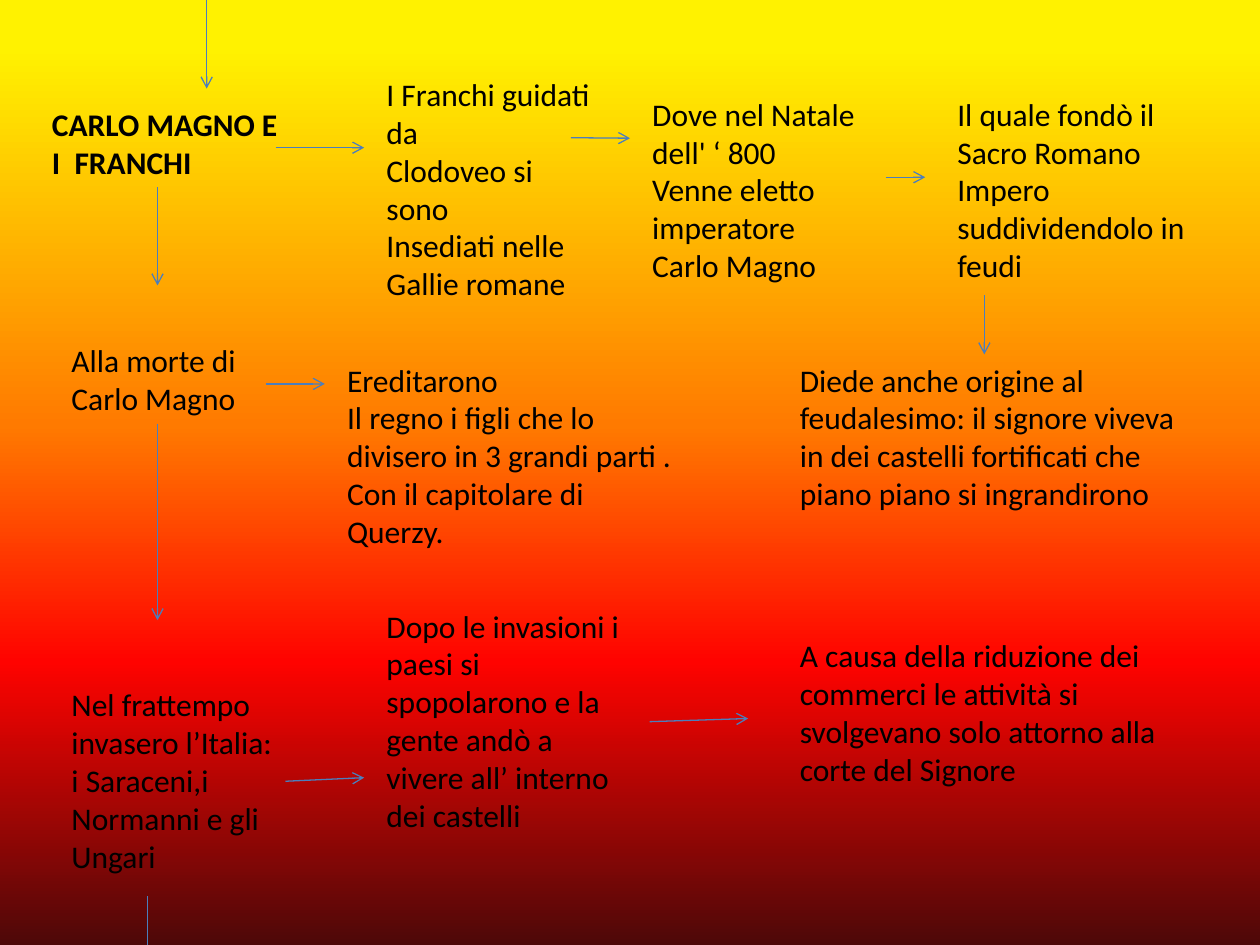
from lxml.etree import SubElement
from pptx import Presentation
from pptx.dml.color import RGBColor
from pptx.enum.shapes import MSO_CONNECTOR
from pptx.enum.text import MSO_ANCHOR, MSO_AUTO_SIZE, PP_ALIGN
from pptx.oxml.ns import qn
from pptx.util import Pt

COLORS = {"text": "000000", "arrow": "4B7EBC"}
BACKGROUND_STOPS = [(5, "FFF200"), (45, "FF7A00"), (70, "FF0300"), (100, "4D0808")]
FONT = "Calibri"
TEXT_SIZE = 18
LINE_HEIGHT = 21.9
VERTICAL_INSETS = 7.2

# name: (left, top, width, lines shown, paragraphs); lengths in points
TOPICS = {
    "title": (22.5, 56.25, 151.9, 2, ["CARLO MAGNO E I  FRANCHI"]),
    "clodoveo": (213.75, 39.4, 135, 6, [
        "I Franchi guidati da", "Clodoveo si sono", "Insediati nelle", "Gallie romane"]),
    "natale": (365.6, 50.6, 135, 5, [
        "Dove nel Natale dell' ‘ 800", "Venne eletto imperatore", "Carlo Magno"]),
    "impero": (540, 50.6, 157.5, 5, [
        "Il quale fondò il Sacro Romano Impero suddividendolo in feudi"]),
    "feudalesimo": (450, 202.5, 236.25, 4, [
        "Diede anche origine al feudalesimo: il signore viveva in dei castelli "
        "fortificati che piano piano si ingrandirono"]),
    "morte": (33.75, 191.25, 112.5, 2, ["Alla morte di  Carlo Magno"]),
    "eredi": (191.25, 202.5, 202.5, 5, [
        "Ereditarono",
        "Il regno i figli che lo divisero in 3 grandi parti . "
        "Con il capitolare di Querzy."]),
    "invasioni": (33.75, 388.1, 129.4, 5, [
        "Nel frattempo invasero l’Italia: i Saraceni,i Normanni e gli Ungari"]),
    "castelli": (213.75, 343.1, 157.5, 6, [
        "Dopo le invasioni i paesi si spopolarono e la gente andò a vivere "
        "all’ interno dei castelli"]),
    "commerci": (450, 360, 241.9, 4, [
        "A causa della riduzione dei commerci le attività si svolgevano solo "
        "attorno alla corte del Signore"]),
}

# (start, end, has arrowhead, (topic, side) where the start is joined)
ARROWS = [
    ((118.1, 0), (118.1, 50.6), True, None),
    ((157.5, 84.4), (208.1, 84.4), True, None),
    ((326.2, 78.7), (360, 79), True, None),
    ((506.2, 101.3), (528.7, 101.3), True, None),
    ((562.5, 168.7), (562.5, 202.5), True, None),
    ((90, 107.1), (90, 163.1), True, None),
    ((151.9, 219.4), (185.6, 219.4), True, None),
    ((90, 242.2), (90, 354.4), True, ("morte", 2)),
    ((163.1, 446.4), (208.1, 444.4), True, ("invasioni", 3)),
    ((371.2, 412.3), (427.5, 410.6), True, ("castelli", 3)),
    ((84.4, 511.9), (84.4, 540), False, None),
]


def paint_background(slide):
    fill = slide.background.fill
    fill.gradient()
    fill.gradient_angle = 270  # counter-clockwise, so the colours run downwards
    stops = slide.background._cSld.find(".//" + qn("a:gsLst"))
    for stop in list(stops):
        stops.remove(stop)
    for percent, color in BACKGROUND_STOPS:
        stop = SubElement(stops, qn("a:gs"), pos=str(percent * 1000))
        SubElement(stop, qn("a:srgbClr"), val=color)


def add_topic(slide, name):
    left, top, width, lines, paragraphs = TOPICS[name]
    frame = [Pt(v) for v in (left, top, width, lines * LINE_HEIGHT + VERTICAL_INSETS)]
    if name == "title":
        topic = slide.shapes.title
        topic.left, topic.top, topic.width, topic.height = frame
    else:
        topic = slide.shapes.add_textbox(*frame)
    body = topic.text_frame
    body.word_wrap = True
    body.auto_size = MSO_AUTO_SIZE.SHAPE_TO_FIT_TEXT
    body.vertical_anchor = MSO_ANCHOR.TOP
    for index, text in enumerate(paragraphs):
        paragraph = body.add_paragraph() if index else body.paragraphs[0]
        paragraph.alignment = PP_ALIGN.LEFT
        run = paragraph.add_run()
        run.text = text
        run.font.name = FONT
        run.font.size = Pt(TEXT_SIZE)
        run.font.bold = name == "title"
        run.font.color.rgb = RGBColor.from_string(COLORS["text"])
    return topic


def add_arrow(slide, topics, start, end, has_head, joined):
    arrow = slide.shapes.add_connector(
        MSO_CONNECTOR.STRAIGHT, *[Pt(v) for v in start + end])
    if joined:
        name, side = joined
        arrow.begin_connect(topics[name], side)
    arrow.line.color.rgb = RGBColor.from_string(COLORS["arrow"])
    arrow.line.width = Pt(0.75)
    if has_head:
        SubElement(arrow.line._get_or_add_ln(), qn("a:tailEnd"), type="arrow")
    SubElement(arrow._element.spPr, qn("a:effectLst"))


def main():
    deck = Presentation()
    deck.slide_width, deck.slide_height = Pt(720), Pt(540)
    slide = deck.slides.add_slide(deck.slide_layouts.get_by_name("Title Only"))
    paint_background(slide)
    topics = {name: add_topic(slide, name) for name in TOPICS}
    for arrow in ARROWS:
        add_arrow(slide, topics, *arrow)
    deck.save("out.pptx")


if __name__ == "__main__":
    main()
